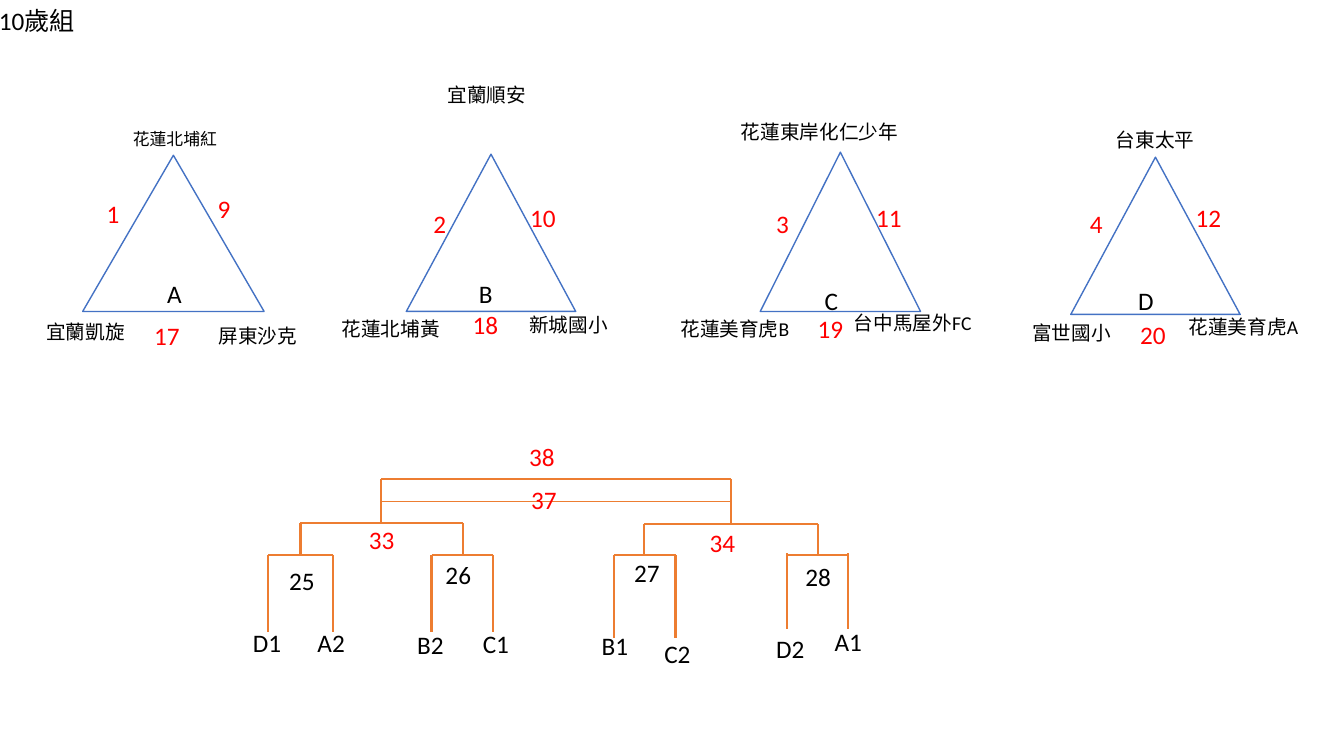
import pptx
import pptx.dml.color
import pptx.enum.shapes
import pptx.enum.text
import pptx.oxml.ns
import pptx.util
from lxml import etree

Inches = pptx.util.Inches


def rgb(value):
    return pptx.dml.color.RGBColor.from_string(value)


class Draw:
    """Draws tournament elements on one slide in a shared style."""

    font = "Calibri"
    black, red, white = "000000", "FF0000", "FFFFFF"
    blue, orange = "4472C4", "ED7D31"
    heights = {18: 0.4, 14: 0.34, 12: 0.3}

    def __init__(self, s):
        self.s = s

    def triangle(self, left, top, width, height):
        sp = self.s.shapes.add_shape(
            pptx.enum.shapes.MSO_SHAPE.ISOSCELES_TRIANGLE,
            Inches(left), Inches(top), Inches(width), Inches(height))
        sp.shadow.inherit = False
        sp.fill.solid()
        sp.fill.fore_color.rgb = rgb(self.white)
        sp.line.color.rgb = rgb(self.blue)
        sp.line.width = pptx.util.Pt(1)

    def text(self, text, left, top, width, size=18, color=black):
        sp = self.s.shapes.add_textbox(
            Inches(left), Inches(top), Inches(width), Inches(self.heights[size]))
        tf = sp.text_frame
        tf.word_wrap = True
        tf.auto_size = pptx.enum.text.MSO_AUTO_SIZE.SHAPE_TO_FIT_TEXT
        tf.text = text
        r = tf.paragraphs[0].runs[0]
        r.font.name = self.font
        r.font.size = pptx.util.Pt(size)
        r.font.color.rgb = rgb(color)

    def line(self, x1, y1, x2, y2, width=1.5):
        c = self.s.shapes.add_connector(
            pptx.enum.shapes.MSO_CONNECTOR.STRAIGHT,
            Inches(x1), Inches(y1), Inches(x2), Inches(y2))
        c.line.color.rgb = rgb(self.orange)
        c.line.width = pptx.util.Pt(width)
        etree.SubElement(c._element.spPr, pptx.oxml.ns.qn("a:effectLst"))

    def bracket(self, left, right, bar, bottom, rise=0):
        self.line(left, bar - rise, left, bottom)
        self.line(left, bar, right, bar)
        self.line(right, bar - rise, right, bottom)


TRIANGLES = [
    (0.82, 1.54, 1.8, 1.55),
    (4.03, 1.53, 1.68, 1.56),
    (7.54, 1.51, 1.59, 1.58),
    (10.62, 1.56, 1.68, 1.56),
]

BRACKETS = [
    (2.66, 3.3, 5.51, 6.27),
    (4.28, 4.89, 5.51, 6.27),
    (6.09, 6.7, 5.51, 6.33),
    (7.81, 8.41, 5.51, 6.24, 0.02),
    (2.98, 4.59, 5.19, 5.51),
    (6.39, 8.11, 5.2, 5.51),
    (3.78, 7.25, 4.75, 5.19),
]

GROUPS = [
    ("A", 1.56, 2.71, 6.85),
    ("B", 4.65, 2.71, 6.85),
    ("C", 8.08, 2.78, 6.85),
    ("D", 11.19, 2.78, 1.98),
]

SEEDS = [
    ("D1", 2.41, 6.17, 0.53),
    ("A2", 3.05, 6.17, 0.59),
    ("B2", 4.04, 6.19, 7.54),
    ("C1", 4.69, 6.18, 7.54),
    ("B1", 5.87, 6.2, 7.54),
    ("C2", 6.49, 6.28, 7.54),
    ("D2", 7.6, 6.23, 7.54),
    ("A1", 8.18, 6.16, 1.74),
]

TEAMS = [
    ("花蓮美育虎A", 11.69, 3.08, 2.18),
    ("花蓮東岸化仁少年", 7.25, 1.14, 3.24),
    ("宜蘭順安", 4.34, 0.77, 7.62),
    ("宜蘭凱旋", 0.36, 3.12, 7.62),
    ("台東太平", 10.97, 1.22, 2.34),
    ("台中馬屋外FC", 8.37, 3.04, 3.29),
    ("花蓮美育虎B", 6.65, 3.09, 2.99),
    ("屏東沙克", 2.07, 3.16, 7.64),
    ("新城國小", 5.15, 3.06, 7.62),
    ("富世國小", 10.14, 3.13, 2.97),
    ("花蓮北埔黃", 3.29, 3.09, 7.65),
]

GROUP_MATCHES = [
    ("1", 0.96, 1.92, 0.51),
    ("2", 4.2, 2.02, 7.65),
    ("3", 7.6, 2.02, 2.42),
    ("4", 10.71, 2.02, 1.95),
    ("9", 2.06, 1.87, 7.65),
    ("10", 5.16, 1.96, 7.65),
    ("11", 8.59, 1.96, 1.51),
    ("12", 11.76, 1.96, 1.78),
    ("17", 1.43, 3.13, 1.97),
    ("18", 4.59, 3.02, 7.65),
    ("19", 8.01, 3.06, 2.42),
    ("20", 11.21, 3.12, 1.83),
]

QUARTER_FINALS = [
    ("25", 2.77, 5.56, 7.65),
    ("26", 4.32, 5.5, 7.65),
    ("27", 6.19, 5.48, 7.65),
    ("28", 7.89, 5.52, 2.21),
]

FINALS = [
    ("33", 3.56, 5.15, 7.65),
    ("34", 6.94, 5.18, 7.65),
    ("37", 5.17, 4.76, 7.65),
    ("38", 5.15, 4.33, 7.65),
]


def main():
    prs = pptx.Presentation()
    prs.slide_width = Inches(13.33)
    prs.slide_height = Inches(7.5)
    d = Draw(prs.slides.add_slide(prs.slide_layouts[6]))

    for triangle in TRIANGLES:
        d.triangle(*triangle)
    for group in GROUPS:
        d.text(*group)
    d.text("10歲組", -0.11, 0, 7.46)
    d.text("花蓮北埔紅", 1.22, 1.23, 7.54, size=12)

    for bracket in BRACKETS:
        d.bracket(*bracket)
    d.line(3.78, 4.97, 7.25, 4.97, width=0.5)

    for seed in SEEDS:
        d.text(*seed)
    for team in TEAMS:
        d.text(*team, size=14)
    for match in GROUP_MATCHES:
        d.text(*match, color=d.red)
    for match in QUARTER_FINALS:
        d.text(*match)
    for match in FINALS:
        d.text(*match, color=d.red)

    prs.save("out.pptx")


if __name__ == "__main__":
    main()
